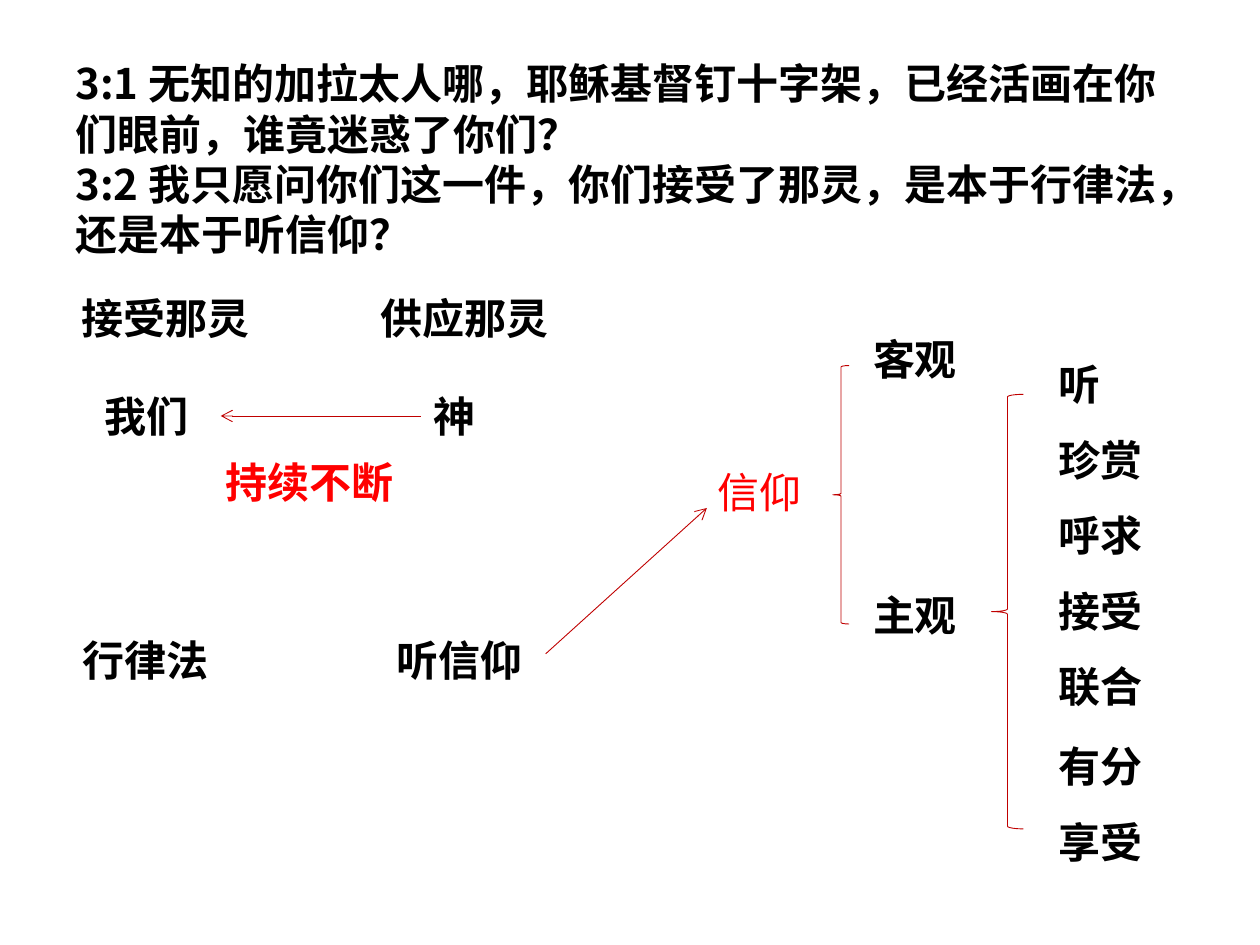
import pptx
import pptx.util
import pptx.dml.color
import pptx.enum.shapes
import pptx.enum.text
import pptx.oxml
import pptx.oxml.ns

Cm = pptx.util.Cm
Pt = pptx.util.Pt
BLACK = pptx.dml.color.RGBColor(0x00, 0x00, 0x00)
RED = pptx.dml.color.RGBColor(0xFF, 0x00, 0x00)
DARK = pptx.dml.color.RGBColor(0xC0, 0x00, 0x00)
SANS = "Noto Sans CJK SC"
TALL = 1.27
ONE, TWO, THREE, FOUR = 1.35, 2.21, 3.2, 3.91
VERSES = [
    "3:1 无知的加拉太人哪，耶稣基督钉十字架，已经活画在你们眼前，谁竟迷惑了你们？",
    "3:2 我只愿问你们这一件，你们接受了那灵，是本于行律法，还是本于听信仰？",
]
STEPS = ["听", "珍赏", "呼求", "接受", "联合", "有分", "享受"]


def write(slide, lines, left, top, width, height=TALL, wrap=False,
          face="Calibri", color=BLACK, bold=True):
    """Add a text box with one paragraph per line."""
    box = slide.shapes.add_textbox(Cm(left), Cm(top), Cm(width), Cm(height))
    frame = box.text_frame
    frame.word_wrap = wrap
    frame.auto_size = pptx.enum.text.MSO_AUTO_SIZE.SHAPE_TO_FIT_TEXT
    frame.text = "\n".join(lines)
    for para in frame.paragraphs:
        para.font.name = face
        para.font.size = Pt(24)
        para.font.bold = bold
        para.font.color.rgb = color
    return box


def arrow(slide, x1, y1, x2, y2):
    """Add a thin red line with an open head at its end."""
    kind = pptx.enum.shapes.MSO_CONNECTOR.STRAIGHT
    link = slide.shapes.add_connector(kind, Cm(x1), Cm(y1), Cm(x2), Cm(y2))
    link.line.color.rgb = DARK
    link.line.width = Pt(0.5)
    qn = pptx.oxml.ns.qn
    line = link.line._get_or_add_ln()
    line.append(line.makeelement(qn("a:tailEnd"), {"type": "arrow"}))
    props = link._element.spPr
    props.append(props.makeelement(qn("a:effectLst"), {}))
    return link


def brace(slide, left, top, width, height):
    """Add a thin red left brace."""
    kind = pptx.enum.shapes.MSO_SHAPE.LEFT_BRACE
    shape = slide.shapes.add_shape(kind, Cm(left), Cm(top), Cm(width), Cm(height))
    shape.shadow.inherit = False
    shape.fill.background()
    shape.line.color.rgb = DARK
    shape.line.width = Pt(0.5)


def verses(slide, left, top, width, height):
    """Place the two verses across the top."""
    write(slide, VERSES, left, top, width, height, wrap=True, face=SANS)


def supply(slide, left, top):
    """Place the receiving and supplying of the Spirit."""
    write(slide, ["接受那灵"], left, top, FOUR)
    write(slide, ["供应那灵"], left + 6.02, top, FOUR)
    row = top + 1.98
    god = write(slide, ["神"], left + 7.08, row, ONE)
    write(slide, ["我们"], left + 0.45, row, TWO)
    mid = row + TALL / 2
    link = arrow(slide, left + 7.08, mid, left + 3.05, mid)
    link.begin_connect(god, 1)
    write(slide, ["持续不断"], left + 2.89, top + 3.3, FOUR, face=SANS, color=RED)


def ways(slide, left, top):
    """Place the two ways and the arrow that leads to faith."""
    write(slide, ["行律法"], left, top, THREE)
    write(slide, ["听信仰"], left + 6.33, top, THREE)
    arrow(slide, left + 9.58, top + 0.51, left + 12.83, top - 2.43)


def faith(slide, left, top):
    """Place faith with its two sides."""
    write(slide, ["信仰"], left, top + 2.67, TWO, face=SANS, color=RED, bold=False)
    brace(slide, left + 2.57, top + 0.77, 0.33, 5.21)
    for i, word in enumerate(["客观", "主观"]):
        write(slide, [word], left + 3.13, top + 5.16 * i, TWO)


def steps(slide, left, top):
    """Place the steps of the subjective side, the last two slightly lower."""
    brace(slide, left, top + 0.84, 0.64, 8.76)
    for i, word in enumerate(STEPS):
        drop = 0.1 if i > 4 else 0
        wide = ONE if len(word) == 1 else TWO
        write(slide, [word], left + 1.09, top + 1.52 * i + drop, wide)


def main():
    """Build and save the slide."""
    deck = pptx.Presentation()
    deck.slide_width, deck.slide_height = Cm(25.4), Cm(19.05)
    slide = deck.slides.add_slide(deck.slide_layouts[6])
    verses(slide, 1.27, 1.04, 23.11, 4.37)
    supply(slide, 1.4, 5.77)
    ways(slide, 1.42, 12.67)
    faith(slide, 14.22, 6.6)
    steps(slide, 19.99, 7.11)
    deck.save("out.pptx")


if __name__ == "__main__":
    main()
